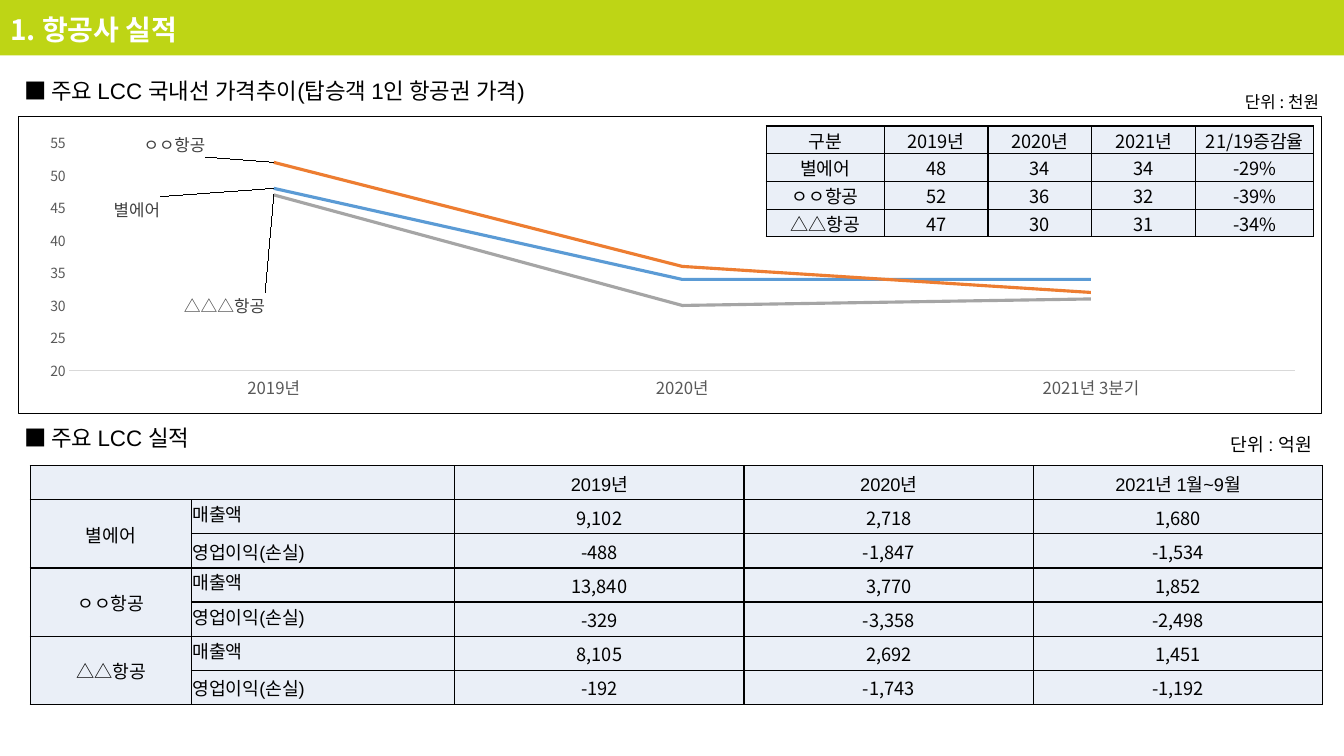
import pptx
import pptx.chart.data
import pptx.dml.color
import pptx.enum.chart
import pptx.enum.text
import pptx.oxml
import pptx.oxml.ns
import pptx.util

Inches = pptx.util.Inches
Pt = pptx.util.Pt
RGBColor = pptx.dml.color.RGBColor
ALIGN = pptx.enum.text.PP_ALIGN
ANCHOR = pptx.enum.text.MSO_ANCHOR
qn = pptx.oxml.ns.qn

LIME = RGBColor(0xBE, 0xD5, 0x15)
WHITE = RGBColor(0xFF, 0xFF, 0xFF)
BLACK = RGBColor(0, 0, 0)
PALE_BLUE = RGBColor(0xEA, 0xEF, 0xF7)
AXIS_TEXT = RGBColor(0x59, 0x59, 0x59)
AXIS_LINE = RGBColor(0xD9, 0xD9, 0xD9)
LABEL_TEXT = RGBColor(0x40, 0x40, 0x40)
BLUE = RGBColor(0x5B, 0x9B, 0xD5)
ORANGE = RGBColor(0xED, 0x7D, 0x31)
GRAY = RGBColor(0xA5, 0xA5, 0xA5)

NOTO = "Noto Sans CJK KR"
ARIAL = "Arial"
WIDTH, HEIGHT = 13.33, 7.5
NAMESPACES = pptx.oxml.ns.nsdecls("a", "c")

# Name, colour, yearly fares, shift of the name label as shares of the chart
FARES = [
    ("별에어", BLUE, (48, 34, 34), (-0.126, 0.07)),
    ("ㅇㅇ항공", ORANGE, (52, 36, 32), (-0.103, -0.06)),
    (" △△△항공", GRAY, (47, 30, 31), (-0.075, 0.37)),
]
FARE_ROWS = [
    ("구분", "2019년", "2020년", "2021년", "21/19증감율"),
    ("별에어", "48", "34", "34", "-29%"),
    ("ㅇㅇ항공", "52", "36", "32", "-39%"),
    ("△△항공", "47", "30", "31", "-34%"),
]
SALES, PROFIT = "매출액", "영업이익(손실)"
RESULT_ROWS = [
    ("", "", "2019년", "2020년", "2021년 1월~9월"),
    ("별에어", SALES, "9,102", "2,718", "1,680"),
    ("", PROFIT, "-488", "-1,847", "-1,534"),
    ("ㅇㅇ항공", SALES, "13,840", "3,770", "1,852"),
    ("", PROFIT, "-329", "-3,358", "-2,498"),
    ("△△항공", SALES, "8,105", "2,692", "1,451"),
    ("", PROFIT, "-192", "-1,743", "-1,192"),
]


def inches(box):
    return [Inches(length) for length in box]


def write(frame, text, font=NOTO, size=13, color=BLACK, bold=False,
          align=ALIGN.CENTER, indent=0, spacing=None, after=0):
    para = frame.paragraphs[0]
    para.alignment = align
    para.line_spacing = spacing
    para.space_after = Pt(after)
    if indent:
        para._p.get_or_add_pPr().set("marL", str(Inches(indent)))
    span = para.add_run()
    span.text = text
    span.font.name = font
    span.font.size = Pt(size)
    span.font.bold = bold
    span.font.color.rgb = color
    latin = span._r.get_or_add_rPr().find(qn("a:latin"))
    latin.addnext(pptx.oxml.parse_xml(f'<a:ea {NAMESPACES} typeface="{NOTO}"/>'))


def add_text(page, box, text, **style):
    frame = page.shapes.add_textbox(*inches(box)).text_frame
    frame.word_wrap = True
    write(frame, text, **style)


def add_title(page, box, text):
    title = page.shapes.title
    title.left, title.top, title.width, title.height = inches(box)
    title.fill.solid()
    title.fill.fore_color.rgb = LIME
    frame = title.text_frame
    frame.auto_size = pptx.enum.text.MSO_AUTO_SIZE.NONE
    frame.vertical_anchor = ANCHOR.MIDDLE
    write(frame, text, size=20, color=WHITE, bold=True, align=ALIGN.JUSTIFY,
          spacing=1.07, after=8)


def add_heading(page, box, text, unit, unit_box, **unit_style):
    add_text(page, box, text, font=ARIAL, size=16, align=ALIGN.JUSTIFY,
             indent=0.14, spacing=1.07, after=8)
    add_text(page, unit_box, unit, align=ALIGN.RIGHT, **unit_style)


def style_cell(cell):
    cell.margin_left = cell.margin_right = cell.margin_top = Inches(0.01)
    cell.margin_bottom = 0
    cell.fill.solid()
    cell.fill.fore_color.rgb = PALE_BLUE
    properties = cell._tc.get_or_add_tcPr()
    for index, side in enumerate(("lnL", "lnR", "lnT", "lnB")):
        properties.insert(index, pptx.oxml.parse_xml(
            f'<a:{side} {NAMESPACES} w="{Pt(1)}"><a:solidFill>'
            f'<a:srgbClr val="{BLACK}"/></a:solidFill></a:{side}>'))


def add_grid(page, box, column_widths, rows, cell_format, merges=()):
    table = page.shapes.add_table(len(rows), len(column_widths), *inches(box)).table
    table.first_row = table.horz_banding = False
    for column, width in zip(table.columns, column_widths):
        column.width = Inches(width)
    for row_index, row in enumerate(rows):
        table.rows[row_index].height = Inches(box[3] / len(rows))
        for column_index, text in enumerate(row):
            cell = table.cell(row_index, column_index)
            style_cell(cell)
            font, align, anchor = cell_format(row_index, column_index)
            cell.vertical_anchor = anchor
            if text:
                write(cell.text_frame, text, font=font, align=align)
    for first, last in merges:
        table.cell(*first).merge(table.cell(*last))


def fare_format(row, column):
    return NOTO, ALIGN.CENTER, ANCHOR.MIDDLE


def result_format(row, column):
    font = NOTO if row and column > 1 else ARIAL
    if column != 1:
        return font, ALIGN.CENTER, ANCHOR.MIDDLE
    return font, ALIGN.LEFT, ANCHOR.TOP if row in (1, 3, 4, 5) else ANCHOR.MIDDLE


def set_font(font, size, color):
    font.name = NOTO
    font.size = Pt(size)
    font.color.rgb = color


def layout_xml(x, y, extra=""):
    return (f'<c:layout {NAMESPACES}><c:manualLayout>{extra}'
            f'<c:x val="{x}"/><c:y val="{y}"/>')


def label_first_point(series, shift):
    labels = series.data_labels
    set_font(labels.font, 12, LABEL_TEXT)
    labels.number_format = "#,##0"
    labels.number_format_is_linked = False
    labels.show_value = True
    flags = "".join(f'<c:show{name} val="{int(name == "SerName")}"/>' for name in
                    ("LegendKey", "Val", "CatName", "SerName", "Percent", "BubbleSize"))
    points = [layout_xml(*shift) + "</c:manualLayout></c:layout>"
              + '<c:dLblPos val="r"/>' + flags] + ['<c:delete val="1"/>'] * 2
    for index, content in enumerate(points):
        labels._element.insert(index, pptx.oxml.parse_xml(
            f'<c:dLbl {NAMESPACES}><c:idx val="{index}"/>{content}</c:dLbl>'))


def add_fare_chart(page, box):
    data = pptx.chart.data.CategoryChartData(number_format="#,##0")
    data.categories = ["2019년", "2020년", "2021년 3분기"]
    for name, color, fares, shift in FARES:
        data.add_series(name, fares)
    chart = page.shapes.add_chart(
        pptx.enum.chart.XL_CHART_TYPE.LINE, *inches(box), data).chart
    chart.has_legend = chart.has_title = False
    set_font(chart.font, 10, BLACK)

    # Lines and their names
    chart.plots[0].vary_by_categories = False
    for series, (name, color, fares, shift) in zip(chart.plots[0].series, FARES):
        series.smooth = False
        series.format.line.color.rgb = color
        series.format.line.width = Pt(2.25)
        series.marker.style = pptx.enum.chart.XL_MARKER_STYLE.NONE
        label_first_point(series, shift)

    # Axes
    for axis, size in ((chart.category_axis, 12), (chart.value_axis, 10)):
        axis.has_major_gridlines = False
        axis.major_tick_mark = axis.minor_tick_mark = pptx.enum.chart.XL_TICK_MARK.NONE
        set_font(axis.tick_labels.font, size, AXIS_TEXT)
    chart.category_axis.format.line.color.rgb = AXIS_LINE
    chart.category_axis.format.line.width = Pt(0.75)
    values = chart.value_axis
    values.format.line.fill.background()
    values.minimum_scale, values.maximum_scale, values.major_unit = 20, 55, 5
    values.tick_labels.number_format = "#,##0"
    values.tick_labels.number_format_is_linked = False

    # Plot position and frame
    body = chart._chartSpace.find(qn("c:chart"))
    plot = body.find(qn("c:plotArea"))
    for layout in plot.findall(qn("c:layout")):
        plot.remove(layout)
    modes = ('<c:layoutTarget val="inner"/><c:xMode val="edge"/>'
             '<c:yMode val="edge"/>')
    plot.insert(0, pptx.oxml.parse_xml(
        layout_xml(0.039, 0.089, modes)
        + '<c:w val="0.941"/><c:h val="0.766"/></c:manualLayout></c:layout>'))
    body.addnext(pptx.oxml.parse_xml(
        f'<c:spPr {NAMESPACES}><a:noFill/><a:ln w="{Pt(0.75)}"><a:solidFill>'
        f'<a:srgbClr val="{BLACK}"/></a:solidFill></a:ln></c:spPr>'))


def main():
    deck = pptx.Presentation()
    deck.slide_width, deck.slide_height = Inches(WIDTH), Inches(HEIGHT)
    page = deck.slides.add_slide(deck.slide_layouts[5])
    add_title(page, (0, 0, WIDTH, 0.55), "1. 항공사 실적")

    # Fares
    add_fare_chart(page, (0.18, 1.15, 12.93, 2.96))
    add_heading(page, (0, 0.7, 5.94, 0.39),
                "■ 주요 LCC 국내선 가격추이(탑승객 1인 항공권 가격)",
                "단위 : 천원", (12.03, 0.86, 1.15, 0.3), size=12)
    add_grid(page, (7.6, 1.25, 5.43, 1.1), [1.17] + [1.03] * 3 + [1.17],
             FARE_ROWS, fare_format)

    # Results
    add_heading(page, (0, 4.14, 3.09, 0.39), "■ 주요 LCC 실적",
                "단위 : 억원", (11.85, 4.25, 1.26, 0.32), font=ARIAL)
    merges = [((0, 0), (0, 1))] + [((row, 0), (row + 1, 0)) for row in (1, 3, 5)]
    add_grid(page, (0.3, 4.62, 12.82, 2.37), [1.6, 2.61] + [2.87] * 3,
             RESULT_ROWS, result_format, merges)
    deck.save("out.pptx")


if __name__ == "__main__":
    main()
